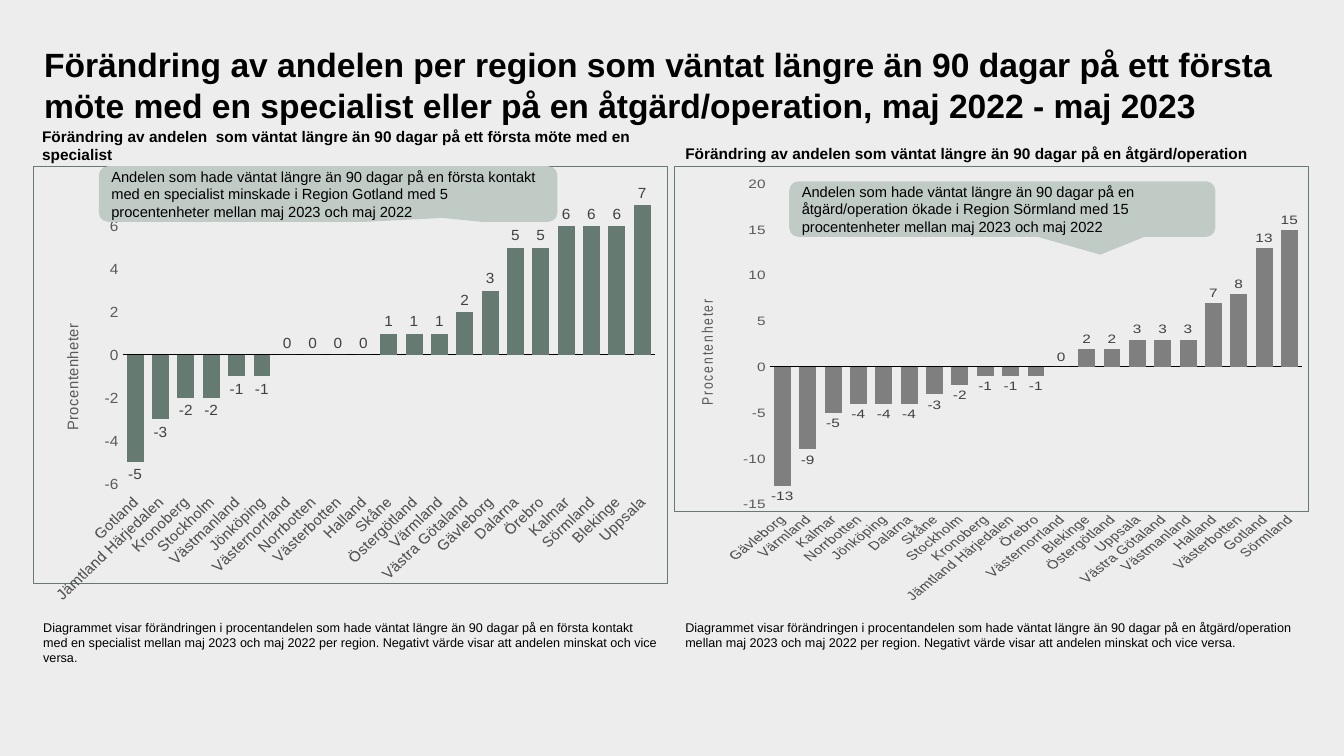
from dataclasses import dataclass

from lxml.etree import SubElement
from pptx import Presentation
from pptx.chart.data import CategoryChartData
from pptx.dml.color import RGBColor
from pptx.enum.chart import XL_CHART_TYPE as ChartType
from pptx.enum.chart import XL_LABEL_POSITION as LabelPosition
from pptx.enum.chart import XL_TICK_LABEL_POSITION as TickLabelPosition
from pptx.enum.chart import XL_TICK_MARK as TickMark
from pptx.enum.shapes import MSO_SHAPE as Shape
from pptx.enum.text import MSO_ANCHOR as Anchor
from pptx.enum.text import PP_ALIGN as Align
from pptx.oxml import parse_xml
from pptx.oxml.ns import nsdecls, qn
from pptx.util import Cm, Pt


@dataclass(frozen=True)
class Theme:
    font: str = "Arial"
    background: str = "EDEDED"
    ink: str = "000000"
    axis: str = "595959"
    label: str = "404040"
    green: str = "657B71"
    grey: str = "7F7F7F"
    callout: str = "C0CBC6"
    title_size: float = 24
    heading_size: float = 11
    chart_size: float = 11
    callout_size: float = 10.5
    note_size: float = 9


THEME = Theme()
PANEL_WIDTH = 16
CHART_TOP, CHART_HEIGHT = 4.19, 11
NOTE_TOP = 15.49

VISIT_CHANGES = {
    "Gotland": -5, "Jämtland Härjedalen": -3, "Kronoberg": -2, "Stockholm": -2,
    "Västmanland": -1, "Jönköping": -1, "Västernorrland": 0, "Norrbotten": 0,
    "Västerbotten": 0, "Halland": 0, "Skåne": 1, "Östergötland": 1,
    "Värmland": 1, "Västra Götaland": 2, "Gävleborg": 3, "Dalarna": 5,
    "Örebro": 5, "Kalmar": 6, "Sörmland": 6, "Blekinge": 6, "Uppsala": 7,
}
TREATMENT_CHANGES = {
    "Gävleborg": -13, "Värmland": -9, "Kalmar": -5, "Norrbotten": -4,
    "Jönköping": -4, "Dalarna": -4, "Skåne": -3, "Stockholm": -2,
    "Kronoberg": -1, "Jämtland Härjedalen": -1, "Örebro": -1,
    "Västernorrland": 0, "Blekinge": 2, "Östergötland": 2, "Uppsala": 3,
    "Västra Götaland": 3, "Västmanland": 3, "Halland": 7, "Västerbotten": 8,
    "Gotland": 13, "Sörmland": 15,
}


def style_font(font, size, color, bold=False):
    """Apply the theme font with the given size and colour."""
    font.name, font.size, font.bold = THEME.font, Pt(size), bold
    font.color.rgb = RGBColor.from_string(color)


def write(frame, text, size, bold=False):
    """Fill a text frame with one left-aligned paragraph and return it."""
    frame.word_wrap = True
    paragraph = frame.paragraphs[0]
    paragraph.alignment = Align.LEFT
    run = paragraph.add_run()
    run.text = text
    style_font(run.font, size, THEME.ink, bold)
    return paragraph


def add_text(slide, box, text, size, bold=False):
    """Add a wrapped text box and return its paragraph."""
    textbox = slide.shapes.add_textbox(*map(Cm, box))
    return write(textbox.text_frame, text, size, bold)


def add_note(slide, left, height, text):
    """Add the explanatory note below a chart."""
    note = add_text(slide, (left, NOTE_TOP, PANEL_WIDTH, height), text, THEME.note_size)
    note.space_after = Pt(8)


def add_callout(slide, box, pointer, text):
    """Add a rounded callout whose pointer is given relative to its centre."""
    callout = slide.shapes.add_shape(Shape.ROUNDED_RECTANGULAR_CALLOUT, *map(Cm, box))
    callout.shadow.inherit = False
    callout.fill.solid()
    callout.fill.fore_color.rgb = RGBColor.from_string(THEME.callout)
    callout.line.fill.background()
    callout.adjustments[0], callout.adjustments[1] = pointer
    callout.text_frame.vertical_anchor = Anchor.MIDDLE
    write(callout.text_frame, text, THEME.callout_size)


def place(element, index, **fractions):
    """Give a chart part a manual layout in fractions of the chart."""
    for previous in element.findall(qn("c:layout")):
        element.remove(previous)
    layout = parse_xml(f"<c:layout {nsdecls('c')}><c:manualLayout/></c:layout>")
    manual = layout[0]
    if "w" in fractions:
        SubElement(manual, qn("c:layoutTarget")).set("val", "inner")
    for side in "xy":
        SubElement(manual, qn(f"c:{side}Mode")).set("val", "edge")
    for name, fraction in fractions.items():
        SubElement(manual, qn(f"c:{name}")).set("val", str(fraction))
    element.insert(index, layout)


def add_border(chart):
    """Draw a thin frame around the chart area."""
    chart._chartSpace.find(qn("c:chart")).addnext(parse_xml(
        f'<c:spPr {nsdecls("c", "a")}><a:noFill/><a:ln w="9525"><a:solidFill>'
        f'<a:srgbClr val="{THEME.green}"/></a:solidFill></a:ln></c:spPr>'))


def style_axes(chart, scale, title_place):
    """Format the region axis and the percentage point axis."""
    regions, points = chart.category_axis, chart.value_axis
    for axis in (regions, points):
        axis.has_major_gridlines = False
        axis.major_tick_mark = axis.minor_tick_mark = TickMark.NONE
        style_font(axis.tick_labels.font, THEME.chart_size, THEME.axis)
    regions.tick_label_position = TickLabelPosition.LOW
    regions.format.line.color.rgb = RGBColor.from_string(THEME.ink)
    regions.format.line.width = Pt(0.75)
    regions._element.find(qn("c:txPr")).find(qn("a:bodyPr")).set("rot", "-2700000")

    points.minimum_scale, points.maximum_scale, points.major_unit = scale
    points.format.line.fill.background()
    points.tick_labels.number_format = "0"
    points.tick_labels.number_format_is_linked = False
    title = points.axis_title
    run = title.text_frame.paragraphs[0].add_run()
    run.text = "Procentenheter"
    style_font(run.font, THEME.chart_size, THEME.axis)
    title.text_frame._txBody.bodyPr.set("rot", "-5400000")
    place(title._element, 1, x=title_place[0], y=title_place[1])


def add_change_chart(slide, left, changes, color, scale, plot_place, title_place):
    """Add a column chart of the change per region."""
    data = CategoryChartData(number_format="0")
    data.categories = list(changes)
    data.add_series("Förändring", list(changes.values()))
    box = (left, CHART_TOP, PANEL_WIDTH, CHART_HEIGHT)
    chart = slide.shapes.add_chart(
        ChartType.COLUMN_CLUSTERED, *map(Cm, box), data).chart
    chart.has_title = chart.has_legend = False
    style_font(chart.font, THEME.chart_size, THEME.ink)
    add_border(chart)
    style_axes(chart, scale, title_place)
    place(chart._chartSpace.chart.plotArea, 0, **dict(zip("xywh", plot_place)))

    plot = chart.plots[0]
    plot.gap_width, plot.overlap, plot.vary_by_categories = 50, -27, False
    bars = plot.series[0]
    bars.invert_if_negative = False
    bars.format.fill.solid()
    bars.format.fill.fore_color.rgb = RGBColor.from_string(color)
    labels = bars.data_labels
    labels.show_value = True
    labels.position = LabelPosition.OUTSIDE_END
    labels.number_format, labels.number_format_is_linked = "0", False
    style_font(labels.font, THEME.chart_size, THEME.label)


def main():
    """Build the slide and save it."""
    deck = Presentation()
    deck.slide_width, deck.slide_height = Cm(33.87), Cm(19.05)
    slide = deck.slides.add_slide(deck.slide_layouts[6])
    slide.background.fill.solid()
    slide.background.fill.fore_color.rgb = RGBColor.from_string(THEME.background)

    add_change_chart(slide, 0.84, VISIT_CHANGES, THEME.green, (-6, 8, 2),
                     (0.14, 0.04, 0.84, 0.72), (0.04, 0.38))
    add_change_chart(slide, 16.99, TREATMENT_CHANGES, THEME.grey, (-15, 20, 5),
                     (0.15, 0.05, 0.84, 0.93), (0.03, 0.44))
    add_text(slide, (0.81, 3.07, PANEL_WIDTH, 1.19),
             "Förändring av andelen  som väntat längre än 90 dagar på ett första möte med en specialist",
             THEME.heading_size, bold=True)
    add_text(slide, (17.02, 3.51, PANEL_WIDTH, 0.74),
             "Förändring av andelen som väntat längre än 90 dagar på en åtgärd/operation",
             THEME.heading_size, bold=True)
    add_text(slide, (0.86, 0.99, 32.39, 2.31),
             "Förändring av andelen per region som väntat längre än 90 dagar på ett första möte "
             "med en specialist eller på en åtgärd/operation, maj 2022 - maj 2023",
             THEME.title_size, bold=True)
    note = "Diagrammet visar förändringen i procentandelen som hade väntat längre än 90 dagar på en {} " \
           "mellan maj 2023 och maj 2022 per region. Negativt värde visar att andelen minskat och vice versa."
    add_note(slide, 0.84, 1.42, note.format("första kontakt med en specialist"))
    add_note(slide, 17.02, 1.02, note.format("åtgärd/operation"))
    callout = "Andelen som hade väntat längre än 90 dagar på en {} procentenheter mellan maj 2023 och maj 2022"
    add_callout(slide, (2.49, 4.19, 11.56, 1.4), (0.25, 0.43),
                callout.format("första kontakt med en specialist minskade i Region Gotland med 5"))
    add_callout(slide, (19.89, 4.57, 10.74, 1.4), (0.23, 0.82),
                callout.format("åtgärd/operation ökade i Region Sörmland med 15"))
    deck.save("out.pptx")


if __name__ == "__main__":
    main()
